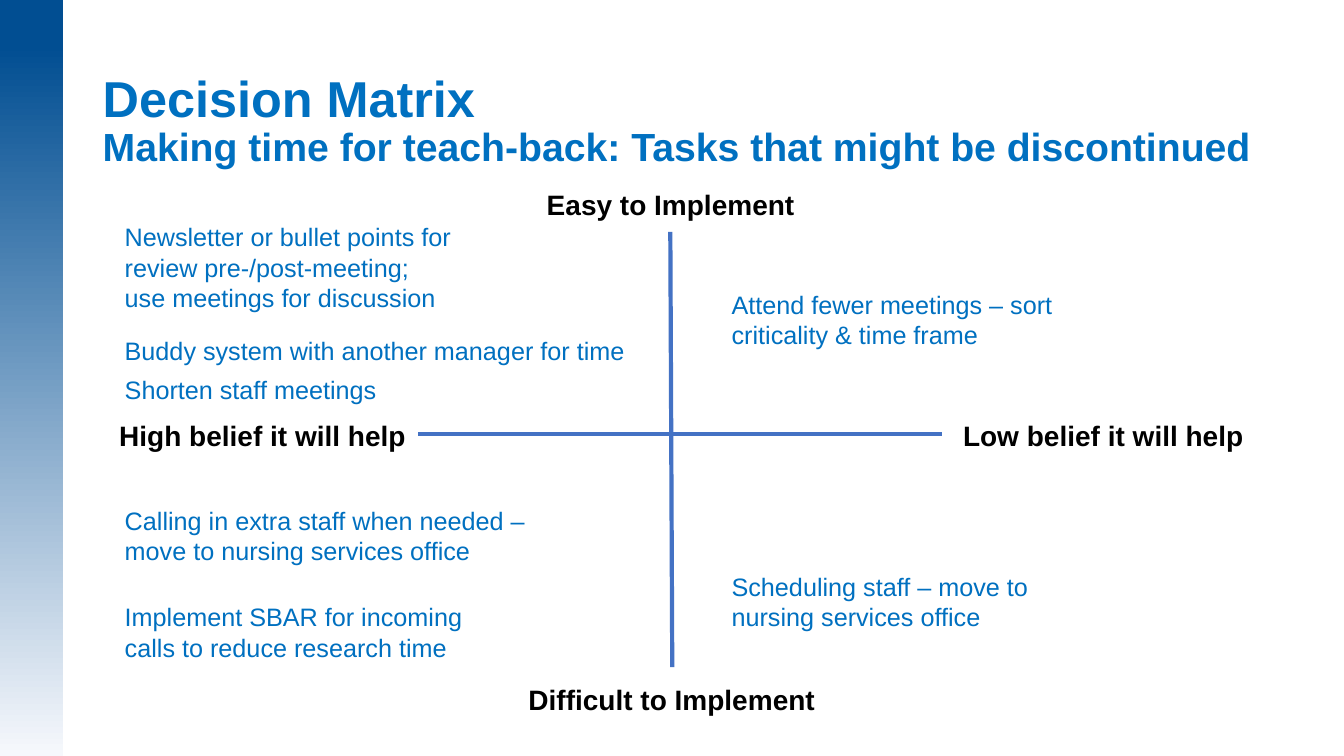
"""Build the decision matrix slide on tasks that might be discontinued."""
from lxml.etree import SubElement
from pptx import Presentation
from pptx.dml.color import RGBColor
from pptx.enum.shapes import MSO_CONNECTOR as Connector, MSO_SHAPE as Shape
from pptx.enum.text import MSO_ANCHOR as Anchor, MSO_AUTO_SIZE as AutoSize, PP_ALIGN as Align
from pptx.oxml.ns import qn
from pptx.util import Pt

COLORS = {
    "heading": "0070C0",
    "label": "000000",
    "axis": "4472C4",
    "band_top": "014E92",
    "band_bottom": "F6F8FC",
}
LEFT, RIGHT = 82, 515.5
NOTES = [
    (LEFT, 154.8, 338, "Newsletter or bullet points for\nreview pre-/post-meeting;\nuse meetings for discussion"),
    (LEFT, 236.2, 412, "Buddy system with another manager for time"),
    (LEFT, 264.2, 223, "Shorten staff meetings"),
    (LEFT, 357.1, 328, "Calling in extra staff when needed – move to nursing services office"),
    (LEFT, 426.2, 279, "Implement SBAR for incoming calls to reduce research time"),
    (RIGHT, 203, 250, "Attend fewer meetings – sort criticality & time frame"),
    (RIGHT, 404.6, 274, "Scheduling staff – move to nursing services office"),
]
LABELS = [
    (343.4, 130.3, 271.4, "Easy to Implement"),
    (290.9, 483.8, 378, "Difficult to Implement"),
    (61.2, 295.2, 252.7, "High belief it will help"),
    (668.2, 295.2, 239.8, "Low belief it will help"),
]
AXES = [(478.8, 165.6, 480.2, 476.6), (298.8, 310.3, 673.2, 310.3)]


def rgb(name):
    """Return the named palette colour."""
    return RGBColor.from_string(COLORS[name])


def write(paragraph, text, size=18, color="heading", bold=False, font="Arial"):
    """Add text to a paragraph, with a line break at each newline."""
    for index, line in enumerate(text.split("\n")):
        if index:
            paragraph.add_line_break()
        run = paragraph.add_run()
        run.text = line
        run.font.name = font
        run.font.size = Pt(size)
        run.font.bold = bold
        run.font.color.rgb = rgb(color)


class MatrixSlide:
    """Hold the current slide and add styled elements to it."""

    def __init__(self, deck):
        """Add a title-only slide to the deck."""
        self.slide = deck.slides.add_slide(deck.slide_layouts[5])
        self.shapes = self.slide.shapes

    def band(self, width, height):
        """Add the gradient band along the left edge."""
        band = self.shapes.add_shape(Shape.RECTANGLE, 0, 0, Pt(width), Pt(height))
        band.shadow.inherit = False
        band.line.fill.background()
        band.fill.gradient()
        band.fill.gradient_angle = 270
        stops = zip(band.fill.gradient_stops, (0.06, 1), ("band_top", "band_bottom"))
        for stop, position, color in stops:
            stop.position = position
            stop.color.rgb = rgb(color)

    def title(self, heading, subheading):
        """Place the title with its smaller second line."""
        title = self.shapes.title
        title.left, title.top, title.width, title.height = map(Pt, (66.2, 61.2, 870.5, 96.5))
        frame = title.text_frame
        frame.word_wrap = True
        frame.auto_size = AutoSize.NONE
        frame.vertical_anchor = Anchor.TOP
        frame.margin_top = 0
        paragraph = frame.paragraphs[0]
        paragraph.alignment = Align.LEFT
        paragraph.line_spacing = Pt(30)
        write(paragraph, heading, size=36, bold=True)
        paragraph.add_line_break()
        write(paragraph, subheading, size=28, bold=True)

    def text(self, left, top, width, text, align=Align.LEFT, **style):
        """Add a wrapped text box that grows with its text."""
        lines = text.count("\n") + 1
        box = self.shapes.add_textbox(Pt(left), Pt(top), Pt(width), Pt(7.2 + 22 * lines))
        frame = box.text_frame
        frame.word_wrap = True
        frame.auto_size = AutoSize.SHAPE_TO_FIT_TEXT
        frame.paragraphs[0].alignment = align
        write(frame.paragraphs[0], text, **style)

    def axis(self, *ends):
        """Add an axis line between two points."""
        axis = self.shapes.add_connector(Connector.STRAIGHT, *map(Pt, ends))
        axis.line.color.rgb = rgb("axis")
        axis.line.width = Pt(3)
        SubElement(axis.element.spPr, qn("a:effectLst"))


def main():
    """Build and save the deck."""
    deck = Presentation()
    deck.slide_width, deck.slide_height = Pt(960), Pt(540)
    matrix = MatrixSlide(deck)
    matrix.band(45, 540)
    matrix.title("Decision Matrix", "Making time for teach-back: Tasks that might be discontinued")
    for note in NOTES:
        matrix.text(*note)
    for label in LABELS:
        matrix.text(*label, align=Align.CENTER, size=20, color="label", bold=True)
    for ends in AXES:
        matrix.axis(*ends)
    deck.save("out.pptx")


if __name__ == "__main__":
    main()
